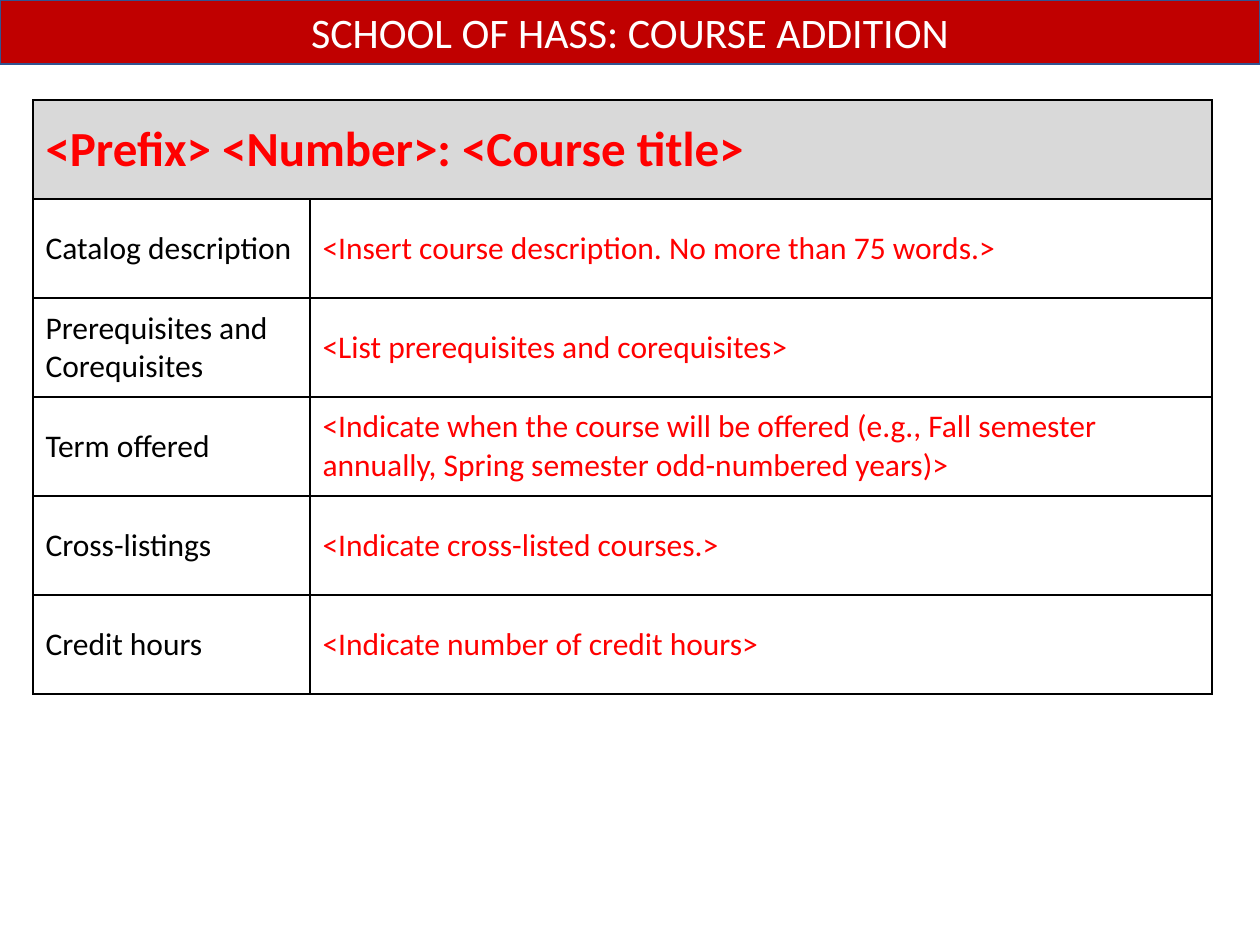
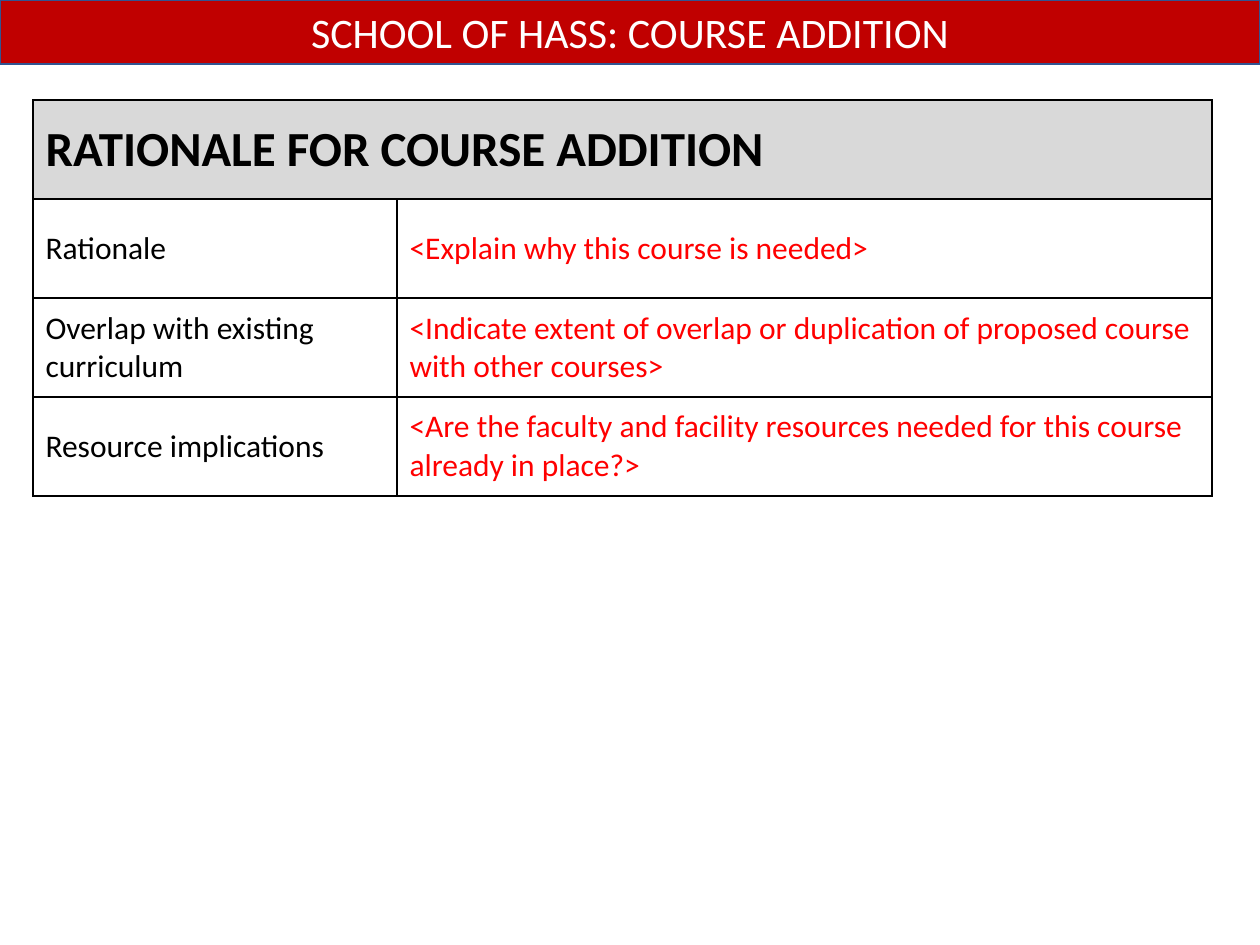
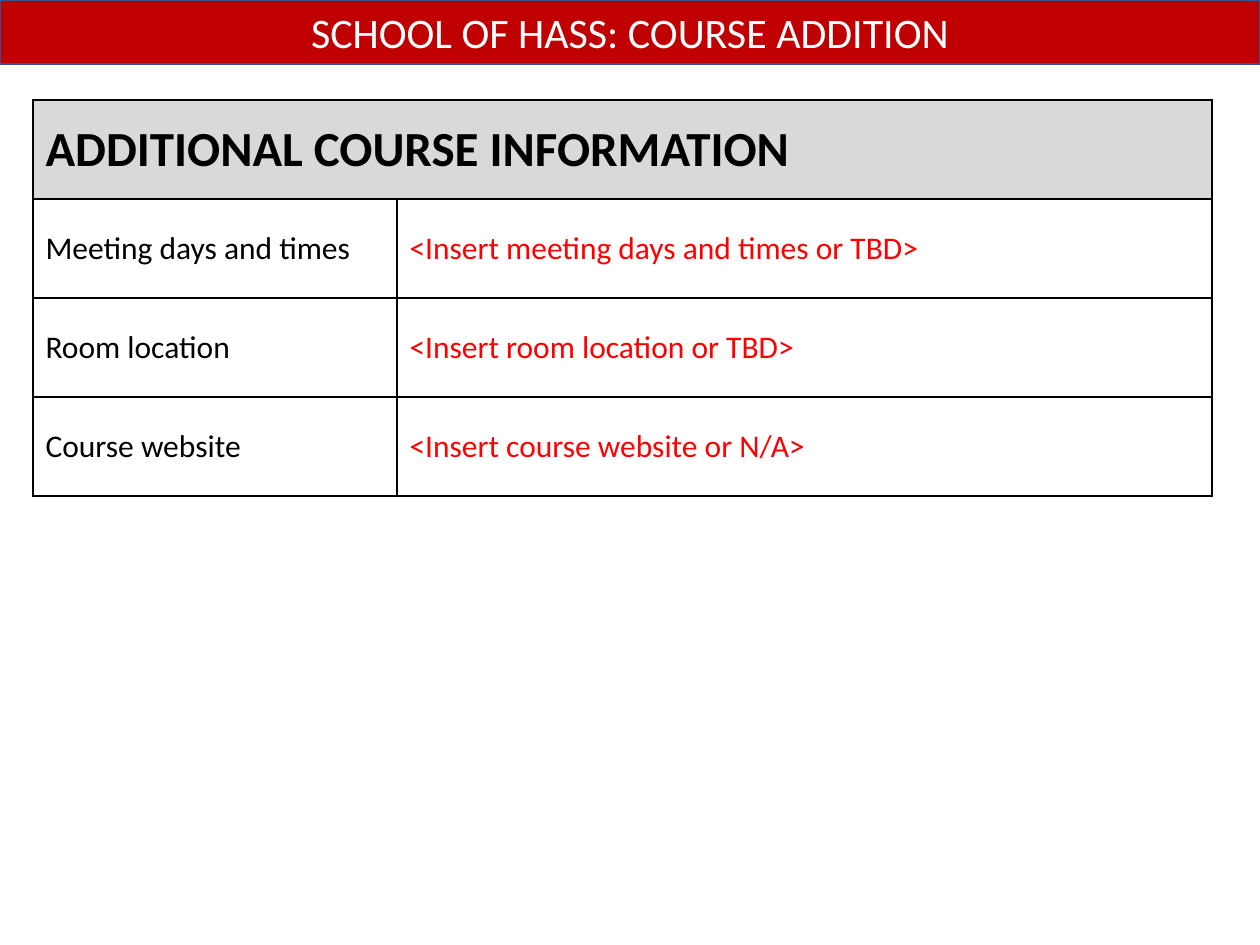
import pptx
import pptx.dml.color
import pptx.enum.shapes
import pptx.enum.text
import pptx.oxml
import pptx.oxml.ns
import pptx.util

FONT = "Calibri"
BLACK, WHITE, RED = "000000", "FFFFFF", "FF0000"
BAND, EDGE, GREY = "C00000", "325491", "D9D9D9"
BANNER = "SCHOOL OF HASS: COURSE ADDITION"
WIDE, HIGH, BAR = 1260, 945, 64
LEFT, TOP, SPAN, ROW = 33, 100, 1179, 99

# Heading, heading colour, label column width, rows of label and prompt
SLIDES = [
    ("<Prefix> <Number>: <Course title>", RED, 277, [
        ("Catalog description",
         "<Insert course description. No more than 75 words.>"),
        ("Prerequisites and Corequisites",
         "<List prerequisites and corequisites>"),
        ("Term offered",
         "<Indicate when the course will be offered (e.g., Fall semester "
         "annually, Spring semester odd-numbered years)>"),
        ("Cross-listings", "<Indicate cross-listed courses.>"),
        ("Credit hours", "<Indicate number of credit hours>"),
    ]),
    ("RATIONALE FOR COURSE ADDITION", BLACK, 364, [
        ("Rationale", "<Explain why this course is needed>"),
        ("Overlap with existing curriculum",
         "<Indicate extent of overlap or duplication of proposed course "
         "with other courses>"),
        ("Resource implications",
         "<Are the faculty and facility resources needed for this course "
         "already in place?>"),
    ]),
    ("ADDITIONAL COURSE INFORMATION", BLACK, 364, [
        ("Meeting days and times", "<Insert meeting days and times or TBD>"),
        ("Room location", "<Insert room location or TBD>"),
        ("Course website", "<Insert course website or N/A>"),
    ]),
]


def px(num):
    return pptx.util.Emu(num * 914400 // 126)


def color(code):
    return pptx.dml.color.RGBColor.from_string(code)


def write(frame, text, size=18, ink=BLACK, bold=False, align="LEFT"):
    frame.word_wrap = True
    para = frame.paragraphs[0]
    para.alignment = getattr(pptx.enum.text.PP_ALIGN, align)
    run = para.add_run()
    run.text = text
    font = run.font
    font.name, font.size, font.bold = FONT, pptx.util.Pt(size), bold
    font.color.rgb = color(ink)


def border(cell):
    """Draw a black 1 pt line on all four sides; call before filling."""
    props = cell._tc.get_or_add_tcPr()
    for side in ("lnL", "lnR", "lnT", "lnB"):
        props.append(pptx.oxml.parse_xml(
            f'<a:{side} {pptx.oxml.ns.nsdecls("a")} w="12700"><a:solidFill>'
            f'<a:srgbClr val="{BLACK}"/></a:solidFill></a:{side}>'))


def add_form(slide, title, ink, label, rows):
    """Add a table with a merged heading above label and prompt rows."""
    count = len(rows) + 1
    table = slide.shapes.add_table(
        count, 2, px(LEFT), px(TOP), px(SPAN), px(ROW * count)).table
    table.first_row = table.horz_banding = False
    table.columns[0].width = px(label)
    table.columns[1].width = px(SPAN - label)
    for row in table.rows:
        row.height = px(ROW)
    for cell in table.iter_cells():
        border(cell)
        cell.fill.background()
        cell.vertical_anchor = pptx.enum.text.MSO_ANCHOR.MIDDLE

    head = table.cell(0, 0)
    head.merge(table.cell(0, 1))
    head.fill.solid()
    head.fill.fore_color.rgb = color(GREY)
    write(head.text_frame, title, size=28, ink=ink, bold=True)
    for num, (name, prompt) in enumerate(rows, 1):
        write(table.cell(num, 0).text_frame, name)
        write(table.cell(num, 1).text_frame, prompt, ink=RED)


def add_banner(slide):
    bar = slide.shapes.add_shape(
        pptx.enum.shapes.MSO_SHAPE.RECTANGLE, 0, 0, px(WIDE), px(BAR))
    bar.shadow.inherit = False
    bar.fill.solid()
    bar.fill.fore_color.rgb = color(BAND)
    bar.line.color.rgb = color(EDGE)
    bar.line.width = pptx.util.Pt(1)
    bar.text_frame.vertical_anchor = pptx.enum.text.MSO_ANCHOR.MIDDLE
    write(bar.text_frame, BANNER, size=24, ink=WHITE, align="CENTER")


def main():
    deck = pptx.Presentation()
    deck.slide_width, deck.slide_height = px(WIDE), px(HIGH)
    for title, ink, label, rows in SLIDES:
        slide = deck.slides.add_slide(deck.slide_layouts[6])
        add_form(slide, title, ink, label, rows)
        add_banner(slide)
    deck.save("out.pptx")


if __name__ == "__main__":
    main()
